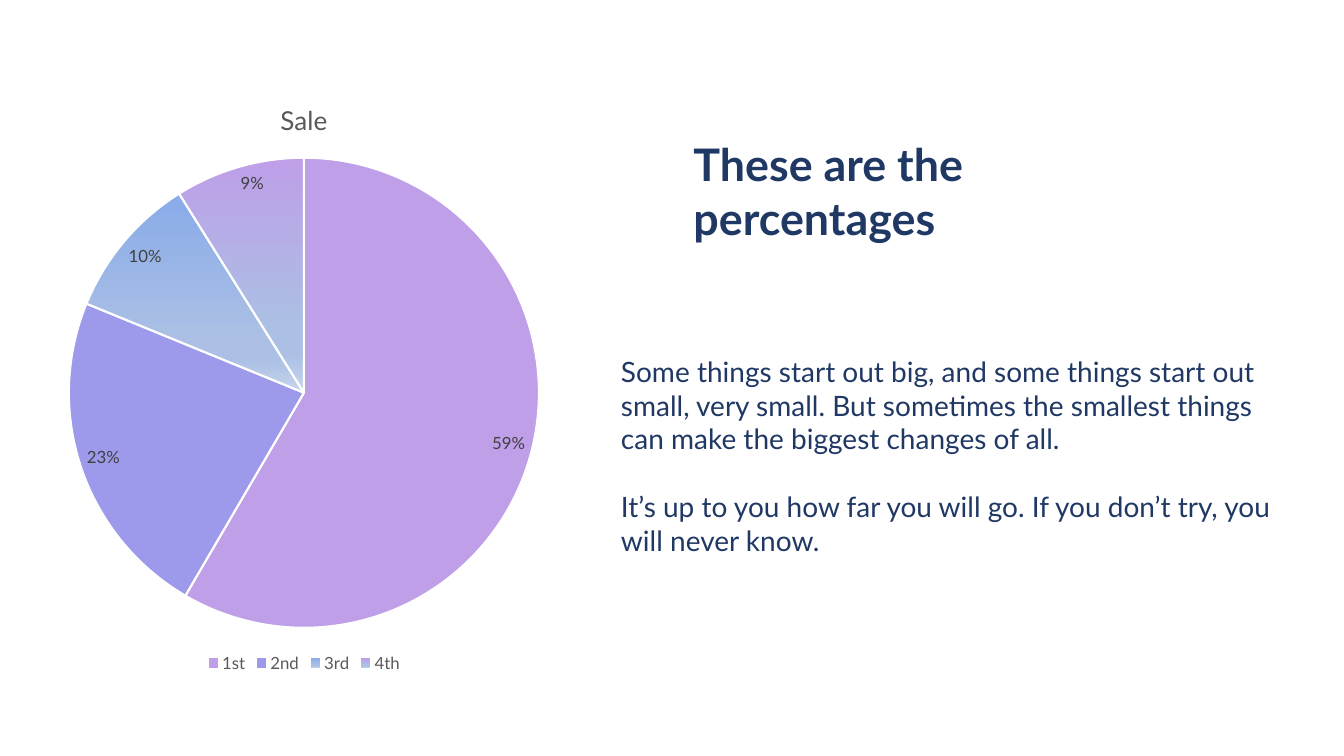
from lxml import etree
from pptx import Presentation
from pptx.chart.data import CategoryChartData
from pptx.dml.color import RGBColor
from pptx.enum.chart import XL_CHART_TYPE, XL_LABEL_POSITION, XL_LEGEND_POSITION
from pptx.enum.text import MSO_ANCHOR, MSO_AUTO_SIZE, PP_ALIGN
from pptx.oxml.ns import qn
from pptx.util import Cm, Pt

PIE = XL_CHART_TYPE.PIE
INSIDE_END = XL_LABEL_POSITION.INSIDE_END
BOTTOM = XL_LEGEND_POSITION.BOTTOM
TOP = MSO_ANCHOR.TOP
LEFT = PP_ALIGN.LEFT
NO_RESIZE = MSO_AUTO_SIZE.NONE
TITLE_ONLY = 5

FONT = "Lato"
NAVY = "203864"
GREY = "595959"
DARK_GREY = "404040"
WHITE = "FFFFFF"
SHARES = {"1st": 59, "2nd": 23, "3rd": 10, "4th": 9}
FADE = [(74, "ABC0E4"), (83, "ABC0E4"), (100, "C7D5ED")]
SLICES = [
    "BE9FE8",
    "9D99EB",
    [(0, "89ABE9")] + FADE,
    [(0, "BE9FE8")] + FADE,
]
TITLE_LINES = ["These are the", "percentages"]
BODY = [
    "Some things start out big, and some things start out small, very small. "
    "But sometimes the smallest things can make the biggest changes of all.",
    "It’s up to you how far you will go. If you don’t try, you will never know.",
]


def color(value):
    """Turn a hex string into a colour."""
    return RGBColor.from_string(value)


def style_font(font, size, value, bold=False):
    """Set the face, size, colour and weight of a font."""
    font.name = FONT
    font.size = Pt(size)
    font.bold = bold
    font.color.rgb = color(value)


def fill_gradient(fill, chart, stops):
    """Fill a slice from top to bottom through the given stops."""
    fill.gradient()
    fill.gradient_angle = 270
    stop_list = list(chart.element.iter(qn("a:gsLst")))[-1]
    for stop in list(stop_list):
        stop_list.remove(stop)
    for position, value in stops:
        stop = etree.SubElement(stop_list, qn("a:gs"), pos=str(position * 1000))
        etree.SubElement(stop, qn("a:srgbClr"), val=value)


def add_share_pie(slide, left, top, width, height):
    """Place the pie of sale shares in its box."""
    data = CategoryChartData()
    data.categories = list(SHARES)
    data.add_series("Sale", list(SHARES.values()))
    chart = slide.shapes.add_chart(PIE, left, top, width, height, data).chart
    style_font(chart.font, 10, "000000")

    chart.has_title = True
    span = chart.chart_title.text_frame.paragraphs[0].add_run()
    span.text = "Sale"
    style_font(span.font, 18.6, GREY)
    chart.has_legend = True
    chart.legend.position = BOTTOM
    chart.legend.include_in_layout = False
    style_font(chart.legend.font, 12, GREY)

    plot = chart.plots[0]
    plot.vary_by_categories = True
    for index, look in enumerate(SLICES):
        style = plot.series[0].points[index].format
        style.line.color.rgb = color(WHITE)
        style.line.width = Pt(1.5)
        if isinstance(look, str):
            style.fill.solid()
            style.fill.fore_color.rgb = color(look)
        else:
            fill_gradient(style.fill, chart, look)

    plot.has_data_labels = True
    labels = plot.data_labels
    labels.show_value = True
    labels.show_percentage = False
    labels.number_format = '0"%"'
    labels.number_format_is_linked = False
    labels.position = INSIDE_END
    style_font(labels.font, 12, DARK_GREY)


def add_title(slide, left, top, width, height):
    """Place the two-line title in its box."""
    title = slide.shapes.title
    title.left, title.top, title.width, title.height = left, top, width, height
    frame = title.text_frame
    frame.word_wrap = False
    frame.auto_size = NO_RESIZE
    frame.vertical_anchor = TOP
    para = frame.paragraphs[0]
    para.alignment = LEFT
    for index, line in enumerate(TITLE_LINES):
        if index:
            para.add_line_break()
        span = para.add_run()
        span.text = line
        style_font(span.font, 32, NAVY, bold=True)


def add_body(slide, left, top, width, height, pitch):
    """Stack the body texts in boxes set a pitch apart."""
    for index, text in enumerate(BODY):
        box = slide.shapes.add_textbox(left, top + index * pitch, width, height)
        box.text_frame.word_wrap = True
        span = box.text_frame.paragraphs[0].add_run()
        span.text = text
        style_font(span.font, 20, NAVY)


def main():
    """Build the slide and save the deck."""
    deck = Presentation()
    deck.slide_width, deck.slide_height = Cm(33.87), Cm(19.05)
    page = deck.slides.add_slide(deck.slide_layouts[TITLE_ONLY])
    add_share_pie(page, Cm(-3.63), Cm(2), Cm(22.58), Cm(15.06))
    add_title(page, Cm(17.22), Cm(3.33), Cm(13.61), Cm(3))
    add_body(page, Cm(15.4), Cm(8.81), Cm(17.25), Cm(2.8), Cm(3.41))
    deck.save("out.pptx")


if __name__ == "__main__":
    main()
